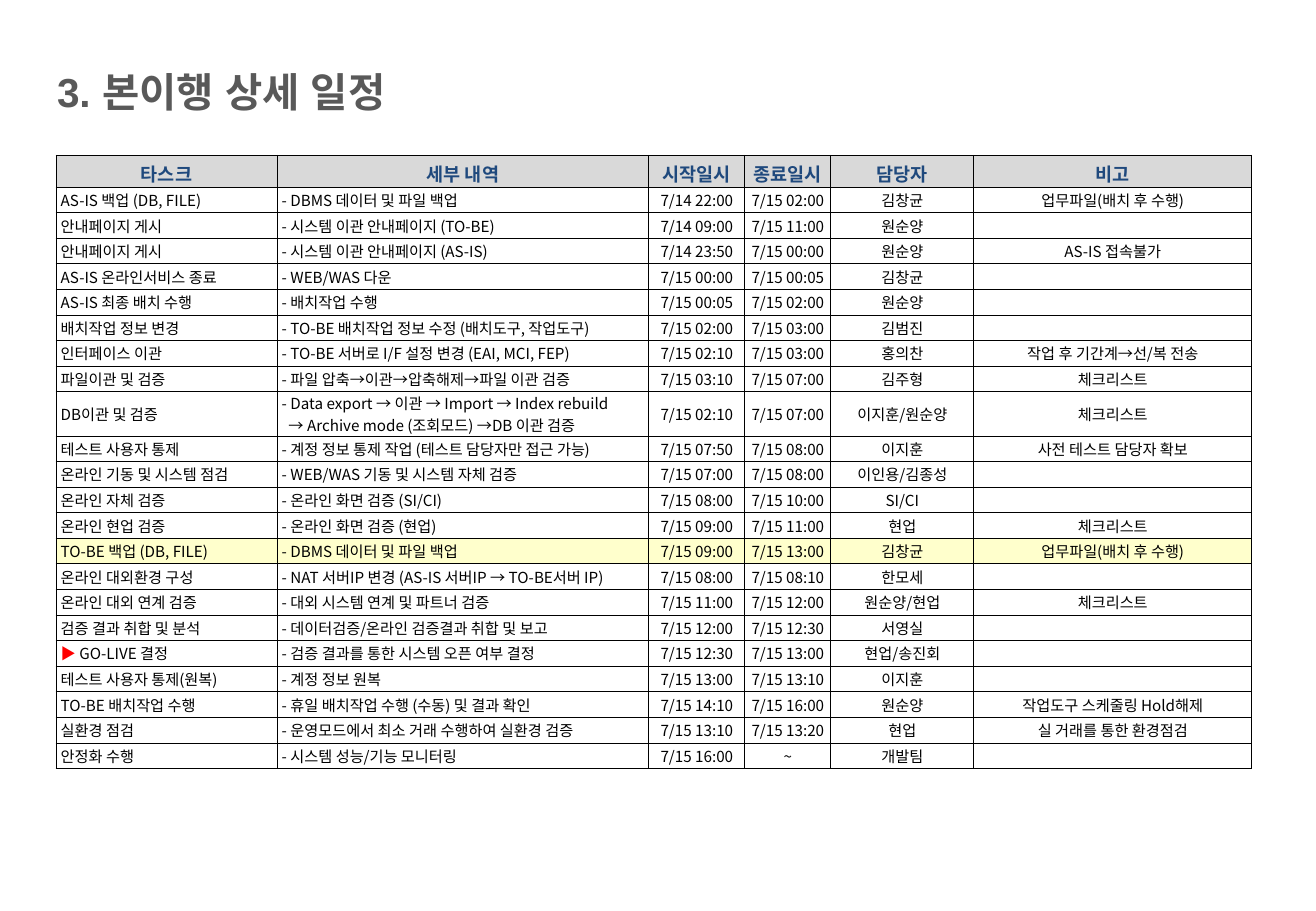
from dataclasses import dataclass, astuple

from lxml.etree import SubElement
from pptx import Presentation
from pptx.dml.color import RGBColor as RGB
from pptx.enum.text import MSO_ANCHOR as Anchor, PP_ALIGN as Align
from pptx.oxml.ns import qn
from pptx.slide import Slide
from pptx.table import _Cell as Cell
from pptx.util import Pt


@dataclass(frozen=True)
class Theme:
    title_font: str = "Arial"
    table_font: str = "Noto Sans CJK KR"
    title_size: float = 24
    header_size: float = 11
    body_size: float = 9
    title: str = "595959"
    header: str = "1F497D"
    header_fill: str = "D9D9D9"
    text: str = "000000"
    marker: str = "FF0000"
    highlight: str = "FFFFCC"
    border: str = "000000"
    border_width: float = 0.5


@dataclass(frozen=True)
class Task:
    name: str
    detail: str
    start: str
    end: str
    owner: str
    note: str = ""


@dataclass(frozen=True)
class CellStyle:
    size: float
    color: str
    bold: bool
    align: Align
    fill: str = ""
    top_inset: float = 0


THEME = Theme()
MARKER = "▶"
HIGHLIGHTED = "TO-BE 백업 (DB, FILE)"
COLUMN_WIDTHS = (131, 220.4, 56.9, 51, 84.7, 164.7)
HEADER_HEIGHT, LINE_HEIGHT, TWO_LINE_HEIGHT = 18.9, 15.17, 25.4
SIDE_INSET, CONTINUATION_INDENT = 2.83, 4

HEADER = Task("타스크", "세부 내역", "시작일시", "종료일시", "담당자", "비고")
TASKS = (
    Task("AS-IS 백업 (DB, FILE)", "- DBMS 데이터 및 파일 백업", "7/14 22:00", "7/15 02:00", "김창균", "업무파일(배치 후 수행)"),
    Task("안내페이지 게시", "- 시스템 이관 안내페이지 (TO-BE)", "7/14 09:00", "7/15 11:00", "원순양"),
    Task("안내페이지 게시", "- 시스템 이관 안내페이지 (AS-IS)", "7/14 23:50", "7/15 00:00", "원순양", "AS-IS 접속불가"),
    Task("AS-IS 온라인서비스 종료", "- WEB/WAS 다운", "7/15 00:00", "7/15 00:05", "김창균"),
    Task("AS-IS 최종 배치 수행", "- 배치작업 수행", "7/15 00:05", "7/15 02:00", "원순양"),
    Task("배치작업 정보 변경", "- TO-BE 배치작업 정보 수정 (배치도구, 작업도구)", "7/15 02:00", "7/15 03:00", "김범진"),
    Task("인터페이스 이관", "- TO-BE 서버로 I/F 설정 변경 (EAI, MCI, FEP)", "7/15 02:10", "7/15 03:00", "홍의찬", "작업 후 기간계→선/복 전송"),
    Task("파일이관 및 검증", "- 파일 압축→이관→압축해제→파일 이관 검증", "7/15 03:10", "7/15 07:00", "김주형", "체크리스트"),
    Task("DB이관 및 검증", "- Data export → 이관 → Import → Index rebuild\n→ Archive mode (조회모드) →DB 이관 검증",
         "7/15 02:10", "7/15 07:00", "이지훈/원순양", "체크리스트"),
    Task("테스트 사용자 통제", "- 계정 정보 통제 작업 (테스트 담당자만 접근 가능)", "7/15 07:50", "7/15 08:00", "이지훈", "사전 테스트 담당자 확보"),
    Task("온라인 기동 및 시스템 점검", "- WEB/WAS 기동 및 시스템 자체 검증", "7/15 07:00", "7/15 08:00", "이인용/김종성"),
    Task("온라인 자체 검증", "- 온라인 화면 검증 (SI/CI)", "7/15 08:00", "7/15 10:00", "SI/CI"),
    Task("온라인 현업 검증", "- 온라인 화면 검증 (현업)", "7/15 09:00", "7/15 11:00", "현업", "체크리스트"),
    Task(HIGHLIGHTED, "- DBMS 데이터 및 파일 백업", "7/15 09:00", "7/15 13:00", "김창균", "업무파일(배치 후 수행)"),
    Task("온라인 대외환경 구성", "- NAT 서버IP 변경 (AS-IS 서버IP → TO-BE서버 IP)", "7/15 08:00", "7/15 08:10", "한모세"),
    Task("온라인 대외 연계 검증", "- 대외 시스템 연계 및 파트너 검증", "7/15 11:00", "7/15 12:00", "원순양/현업", "체크리스트"),
    Task("검증 결과 취합 및 분석", "- 데이터검증/온라인 검증결과 취합 및 보고", "7/15 12:00", "7/15 12:30", "서영실"),
    Task("▶ GO-LIVE 결정", "- 검증 결과를 통한 시스템 오픈 여부 결정", "7/15 12:30", "7/15 13:00", "현업/송진회"),
    Task("테스트 사용자 통제(원복)", "- 계정 정보 원복", "7/15 13:00", "7/15 13:10", "이지훈"),
    Task("TO-BE 배치작업 수행", "- 휴일 배치작업 수행 (수동) 및 결과 확인", "7/15 14:10", "7/15 16:00", "원순양", "작업도구 스케줄링 Hold해제"),
    Task("실환경 점검", "- 운영모드에서 최소 거래 수행하여 실환경 검증", "7/15 13:10", "7/15 13:20", "현업", "실 거래를 통한 환경점검"),
    Task("안정화 수행", "- 시스템 성능/기능 모니터링", "7/15 16:00", "~", "개발팀"),
)


def set_attrs(target: object, values: dict) -> None:
    for name, value in values.items():
        setattr(target, name, value)


def add_run(p, text: str, font: str, size: float, color: str, bold: bool) -> None:
    r = p.add_run()
    r.text = text
    set_attrs(r.font, {"name": font, "size": Pt(size), "bold": bold})
    r.font.color.rgb = RGB.from_string(color)
    SubElement(r.font._element, qn("a:ea"), typeface=font)


def add_title(s: Slide, text: str) -> None:
    sp = s.shapes.title
    set_attrs(sp, {"left": Pt(26.6), "top": Pt(36), "width": Pt(670), "height": Pt(36)})
    tf = sp.text_frame
    set_attrs(tf, {"vertical_anchor": Anchor.MIDDLE, "word_wrap": True})
    p = tf.paragraphs[0]
    p.alignment = Align.LEFT
    add_run(p, text, THEME.title_font, THEME.title_size, THEME.title, True)


def add_borders(cell: Cell) -> None:
    props = cell._tc.get_or_add_tcPr()
    for side in ("lnL", "lnR", "lnT", "lnB"):
        line = SubElement(props, qn(f"a:{side}"), w=str(Pt(THEME.border_width)))
        fill = SubElement(line, qn("a:solidFill"))
        SubElement(fill, qn("a:srgbClr"), val=THEME.border)


def fill_cell(cell: Cell, text: str, style: CellStyle) -> None:
    add_borders(cell)
    if style.fill:
        cell.fill.solid()
        cell.fill.fore_color.rgb = RGB.from_string(style.fill)
    else:
        cell.fill.background()
    set_attrs(cell, {
        "margin_left": Pt(SIDE_INSET), "margin_right": Pt(SIDE_INSET),
        "margin_top": Pt(style.top_inset), "margin_bottom": 0,
        "vertical_anchor": Anchor.MIDDLE,
    })
    tf = cell.text_frame
    for i, line in enumerate(text.split("\n")):
        p = tf.add_paragraph() if i else tf.paragraphs[0]
        p.alignment = style.align
        if i:
            p._p.get_or_add_pPr().set("marL", str(Pt(CONTINUATION_INDENT)))
        if not line:
            SubElement(p._p, qn("a:endParaRPr"), sz=str(int(style.size * 100)))
            continue
        if line.startswith(MARKER):
            add_run(p, MARKER, THEME.table_font, style.size, THEME.marker, style.bold)
            line = line.removeprefix(MARKER)
        add_run(p, line, THEME.table_font, style.size, style.color, style.bold)


def row_height(task: Task) -> float:
    if task is HEADER:
        return HEADER_HEIGHT
    return TWO_LINE_HEIGHT if "\n" in task.detail else LINE_HEIGHT


def cell_style(task: Task, col: int) -> CellStyle:
    if task is HEADER:
        return CellStyle(THEME.header_size, THEME.header, True, Align.CENTER, THEME.header_fill, SIDE_INSET)
    align = Align.LEFT if col < 2 else Align.CENTER
    fill = THEME.highlight if task.name == HIGHLIGHTED else ""
    return CellStyle(THEME.body_size, THEME.text, False, align, fill)


def add_schedule(s: Slide, rows: tuple[Task, ...]) -> None:
    heights = [row_height(task) for task in rows]
    table = s.shapes.add_table(len(rows), len(COLUMN_WIDTHS), Pt(33.2), Pt(92),
                               Pt(sum(COLUMN_WIDTHS)), Pt(sum(heights))).table
    set_attrs(table, {"first_row": False, "horz_banding": False})
    for column, width in zip(table.columns, COLUMN_WIDTHS):
        column.width = Pt(width)
    for row, height, task in zip(table.rows, heights, rows):
        row.height = Pt(height)
        for col, text in enumerate(astuple(task)):
            fill_cell(row.cells[col], text, cell_style(task, col))


def main() -> None:
    prs = Presentation()
    set_attrs(prs, {"slide_width": Pt(780), "slide_height": Pt(540)})
    s = prs.slides.add_slide(prs.slide_layouts[5])
    add_title(s, "3. 본이행 상세 일정")
    add_schedule(s, (HEADER, *TASKS))
    prs.save("out.pptx")


if __name__ == "__main__":
    main()
